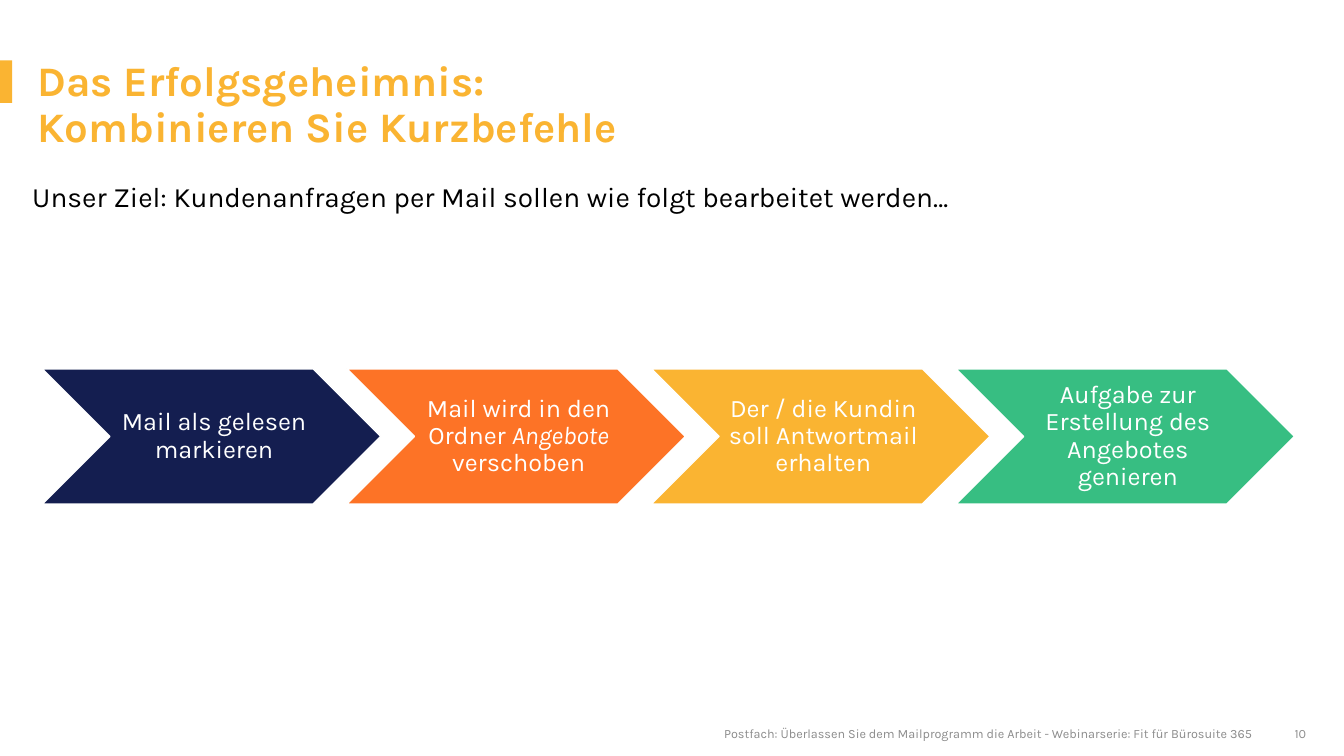
from pptx import Presentation
from pptx.dml.color import RGBColor
from pptx.enum.shapes import MSO_SHAPE as Shape
from pptx.enum.text import MSO_ANCHOR as Anchor, PP_ALIGN as Align
from pptx.util import Inches, Pt

NAVY = RGBColor(0x14, 0x1E, 0x50)
ORANGE = RGBColor(0xFD, 0x73, 0x26)
AMBER = RGBColor(0xFA, 0xB4, 0x32)
GREEN = RGBColor(0x37, 0xBE, 0x82)
GREY = RGBColor(0x8C, 0x8C, 0x8C)
BLACK = RGBColor(0, 0, 0)
WHITE = RGBColor(0xFF, 0xFF, 0xFF)

WIDTH, HEIGHT = 13.33, 7.5
STEPS = [
    (NAVY, ["Mail als gelesen markieren"]),
    (ORANGE, ["Mail wird in den Ordner ", "Angebote", " verschoben"]),
    (AMBER, ["Der / die Kundin soll Antwortmail erhalten"]),
    (GREEN, ["Aufgabe zur Erstellung des Angebotes genieren"]),
]


def style(run, size, color):
    """Give a run the slide's font, a size and a colour."""
    run.font.name = "Karla"
    run.font.size = Pt(size)
    run.font.color.rgb = color


def add_shape(page, kind, box, fill):
    """Add a flat filled shape in the given box."""
    shape = page.shapes.add_shape(kind, *map(Inches, box))
    shape.shadow.inherit = False
    shape.fill.solid()
    shape.fill.fore_color.rgb = fill
    shape.line.fill.background()
    return shape


def add_text(page, box, text, size, color, align=Align.LEFT, anchor=Anchor.TOP, bold=False):
    """Add a text box without margins."""
    frame = page.shapes.add_textbox(*map(Inches, box)).text_frame
    frame.word_wrap = True
    frame.vertical_anchor = anchor
    frame.margin_left = frame.margin_right = frame.margin_top = frame.margin_bottom = 0
    frame.text = text
    para = frame.paragraphs[0]
    para.alignment = align
    para.line_spacing = 0.9
    for run in para.runs:
        style(run, size, color)
        run.font.bold = bold


def add_heading(page, box):
    """Place the accent bar, the title and the lead sentence."""
    left, top, width, height = box
    add_shape(page, Shape.RECTANGLE, (left, top, 0.12, 0.42), AMBER)
    add_text(page, (left + 0.37, top, width, 0.91),
             "Das Erfolgsgeheimnis:\vKombinieren Sie Kurzbefehle", 30, AMBER, bold=True)
    add_text(page, (left + 0.32, top + height - 0.3, width, 0.3),
             "Unser Ziel: Kundenanfragen per Mail sollen wie folgt bearbeitet werden…", 20, BLACK)


def add_process(page, box):
    """Spread the chevron steps over the box, each overlapping the next by a tenth."""
    left, top, width, height = box
    step_width = width / (1 + 0.9 * (len(STEPS) - 1))
    for index, (fill, parts) in enumerate(STEPS):
        place = (left + index * 0.9 * step_width, top, step_width, height)
        chevron = add_shape(page, Shape.CHEVRON, place, fill)
        chevron.line.color.rgb = WHITE
        chevron.line.width = Pt(1)
        frame = chevron.text_frame
        frame.word_wrap = True
        frame.vertical_anchor = Anchor.MIDDLE
        frame.margin_left = Inches(0.08)
        frame.margin_right = frame.margin_top = frame.margin_bottom = Inches(0.03)
        para = frame.paragraphs[0]
        para.alignment = Align.CENTER
        para.line_spacing = 0.9
        for part in parts:
            run = para.add_run()
            run.text = part
            style(run, 18, WHITE)
            run.font.italic = part == "Angebote"


def add_footer(page, box):
    """Place the series name and the page number, both right-aligned."""
    left, top, width, height = box
    number_width = 0.54
    add_text(page, (left, top, width - number_width, height),
             "Postfach: Überlassen Sie dem Mailprogramm die Arbeit - Webinarserie: Fit für Bürosuite 365",
             9, GREY, Align.RIGHT, Anchor.BOTTOM)
    add_text(page, (left + width - number_width, top, number_width, height),
             "10", 9, GREY, Align.RIGHT, Anchor.BOTTOM)


def main():
    """Build the deck and save it."""
    deck = Presentation()
    deck.slide_width, deck.slide_height = Inches(WIDTH), Inches(HEIGHT)
    page = deck.slides.add_slide(deck.slide_layouts[6])
    add_heading(page, (0, 0.6, 9.76, 1.52))
    add_process(page, (0.42, 3.66, 12.42, 1.34))
    add_footer(page, (WIDTH / 2, 7.2, 6.29, 0.15))
    deck.save("out.pptx")


if __name__ == "__main__":
    main()
